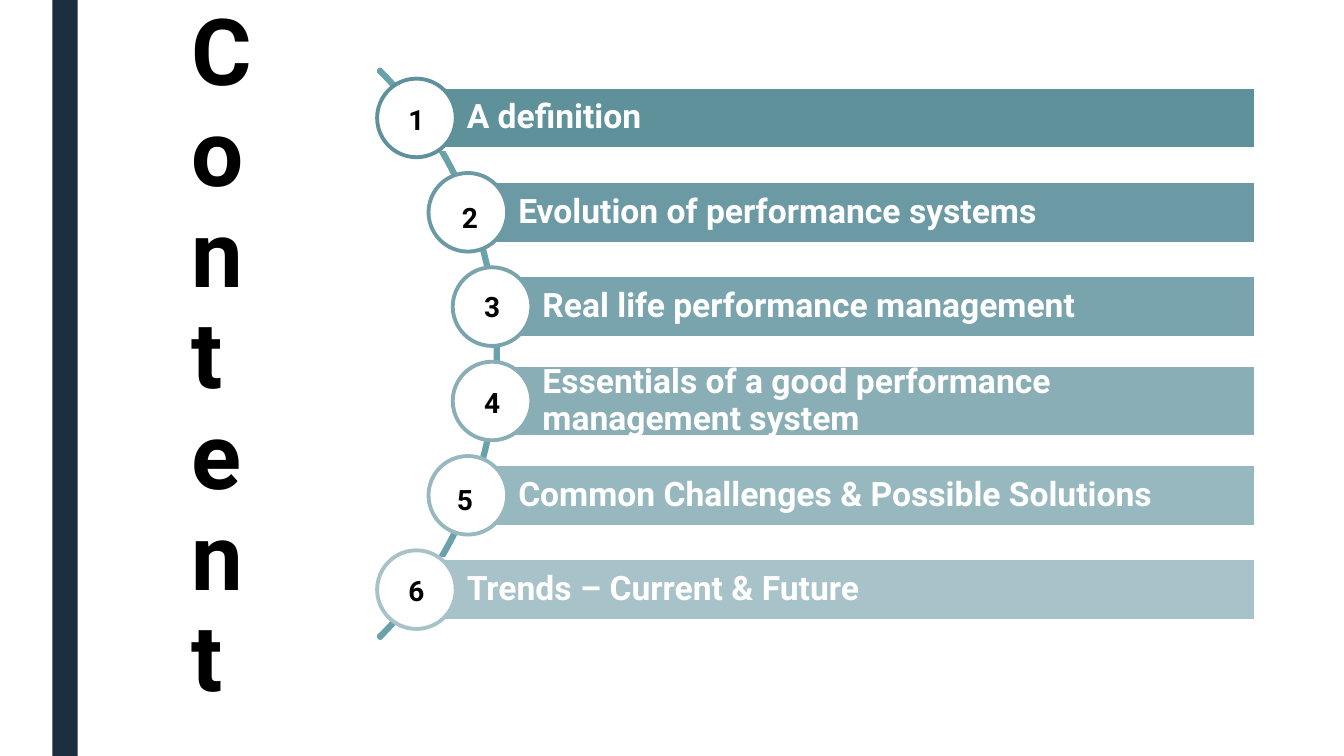
from dataclasses import dataclass

from pptx import Presentation
from pptx.dml.color import RGBColor
from pptx.enum.shapes import MSO_SHAPE
from pptx.enum.text import MSO_ANCHOR, PP_ALIGN
from pptx.util import Inches, Pt

RECTANGLE = MSO_SHAPE.RECTANGLE
OVAL = MSO_SHAPE.OVAL
BLOCK_ARC = MSO_SHAPE.BLOCK_ARC
TOP, MIDDLE = MSO_ANCHOR.TOP, MSO_ANCHOR.MIDDLE
LEFT, CENTER = PP_ALIGN.LEFT, PP_ALIGN.CENTER


@dataclass(frozen=True)
class Theme:
    font: str = "Roboto"
    navy: str = "1A2E40"
    arc: str = "6AA2AB"
    white: str = "FFFFFF"
    black: str = "000000"
    title_size: int = 66
    topic_size: int = 24
    number_size: int = 20
    outline: float = 2.75


@dataclass(frozen=True)
class Topic:
    label: str
    color: str
    left: float
    number_center: float
    number_top: float
    height: float = 0.62


THEME = Theme()
TOPICS = [
    Topic("A definition", "5E919A", 4.13, 4.13, 0.97),
    Topic("Evolution of performance systems", "6B9AA4", 4.64, 4.66, 1.94),
    Topic("Real life performance management", "7AA4AD", 4.88, 4.88, 2.82),
    Topic("Essentials of a good performance management system", "8AAEB5",
          4.88, 4.88, 3.78, 0.71),
    Topic("Common Challenges & Possible Solutions", "98B8BF", 4.64, 4.61, 4.74),
    Topic("Trends – Current & Future", "A7C2C8", 4.13, 4.13, 5.64),
]
FIRST_CENTER = 1.17
ROW_PITCH = 0.936
BAR_RIGHT = 12.46
CIRCLE_SIZE = 0.78
NUMBER_WIDTH, NUMBER_HEIGHT = 0.45, 0.44


def add_figure(slide, preset, box, fill=None, line=None):
    figure = slide.shapes.add_shape(preset, *map(Inches, box))
    figure.shadow.inherit = False
    if fill:
        figure.fill.solid()
        figure.fill.fore_color.rgb = RGBColor.from_string(fill)
    else:
        figure.fill.background()
    if line:
        figure.line.color.rgb = RGBColor.from_string(line)
        figure.line.width = Pt(THEME.outline)
    else:
        figure.line.fill.background()
    return figure


def write(holder, text, size, color, insets=(0.1, 0.05, 0.1, 0.05),
          anchor=TOP, align=LEFT, spacing=1.0):
    frame = holder.text_frame
    frame.word_wrap = True
    frame.vertical_anchor = anchor
    (frame.margin_left, frame.margin_top,
     frame.margin_right, frame.margin_bottom) = map(Inches, insets)
    frame.text = text
    paragraph = frame.paragraphs[0]
    paragraph.alignment = align
    paragraph.line_spacing = spacing
    font = paragraph.runs[0].font
    font.name = THEME.font
    font.size = Pt(size)
    font.bold = True
    font.color.rgb = RGBColor.from_string(color)


def add_label(slide, box, text, size, **layout):
    label = slide.shapes.add_textbox(*map(Inches, box))
    write(label, text, size, THEME.black, **layout)


def add_guide_arc(slide):
    arc = add_figure(slide, BLOCK_ARC, (-3.04, -0.48, 7.98, 7.98), line=THEME.arc)
    for index, value in enumerate((189, 27, 0.003)):
        arc.adjustments[index] = value


def add_topic(slide, number, topic):
    center = FIRST_CENTER + (number - 1) * ROW_PITCH
    bar = add_figure(
        slide, RECTANGLE,
        (topic.left, center - topic.height / 2, BAR_RIGHT - topic.left, topic.height),
        topic.color, THEME.white)
    write(bar, topic.label, THEME.topic_size, THEME.white,
          insets=(0.5, 0.07, 0.07, 0.07), anchor=MIDDLE, spacing=0.9)
    radius = CIRCLE_SIZE / 2
    add_figure(slide, OVAL,
               (topic.left - radius, center - radius, CIRCLE_SIZE, CIRCLE_SIZE),
               THEME.white, topic.color)
    add_label(slide,
              (topic.number_center - NUMBER_WIDTH / 2, topic.number_top,
               NUMBER_WIDTH, NUMBER_HEIGHT),
              str(number), THEME.number_size, align=CENTER)


def main():
    presentation = Presentation()
    presentation.slide_width = Inches(13.33)
    presentation.slide_height = Inches(7.5)
    slide = presentation.slides.add_slide(presentation.slide_layouts[6])
    add_figure(slide, RECTANGLE, (0.52, 0, 0.25, 7.5), THEME.navy)
    add_label(slide, (1.8, 0, 0.74, 7.34), "Content", THEME.title_size, spacing=0.91)
    add_guide_arc(slide)
    for number, topic in enumerate(TOPICS, start=1):
        add_topic(slide, number, topic)
    presentation.save("out.pptx")


if __name__ == "__main__":
    main()
